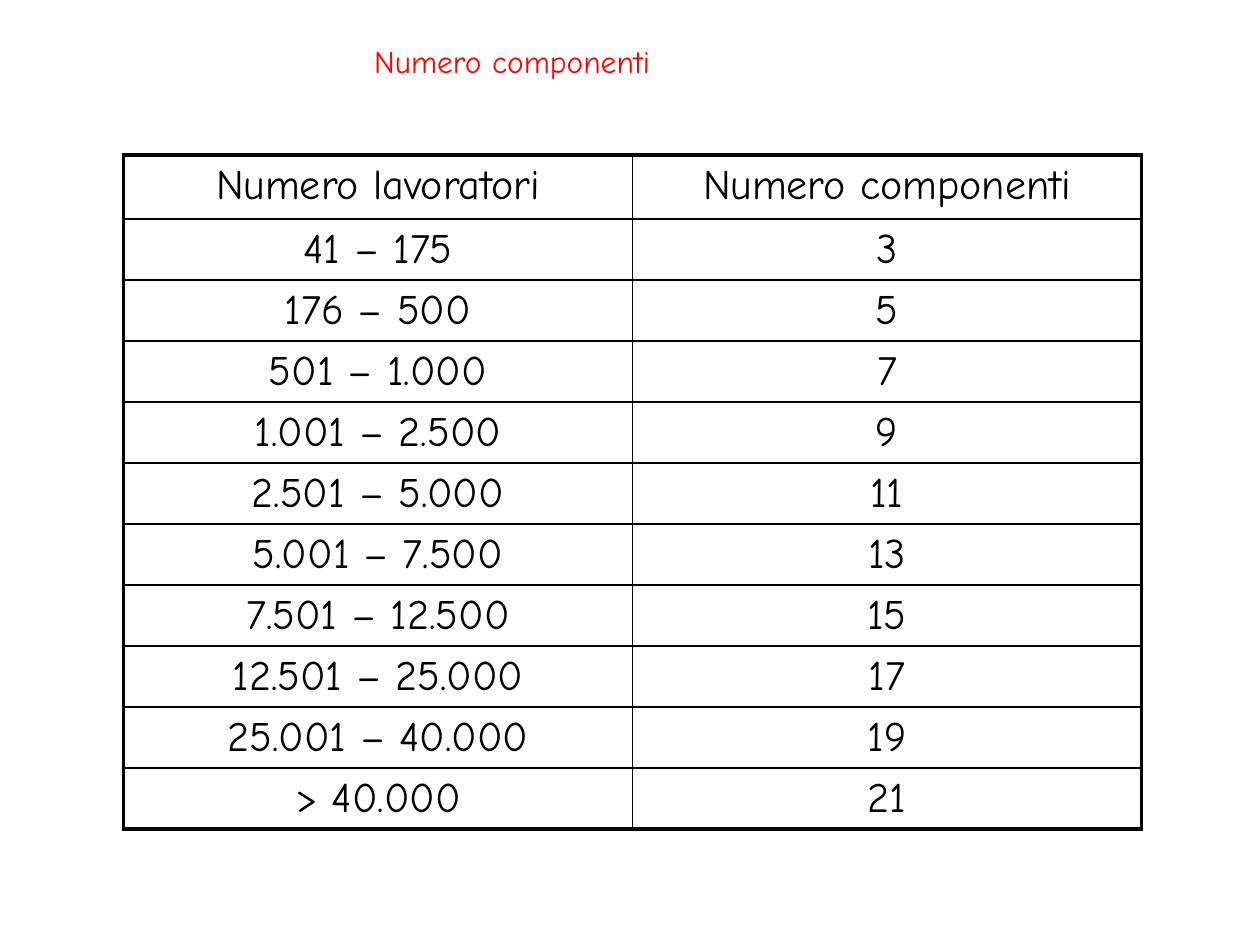
from pptx import Presentation
from pptx.dml.color import RGBColor as RGB
from pptx.enum.text import MSO_ANCHOR as Anchor, MSO_AUTO_SIZE as AutoSize, PP_ALIGN as Align
from pptx.oxml import parse_xml
from pptx.oxml.ns import nsdecls
from pptx.util import Inches, Pt

THEME = {
    "font": "Comic Neue",
    "title": {"size": Pt(18), "color": "FF0000"},
    "cell": {"size": Pt(24), "color": "000000"},
    "paper": "FFFFFF",
    "border": "000000",
    "outer": Pt(2.25),
    "inner": Pt(1),
}

MEMBERS_BY_WORKERS = [
    ("Numero lavoratori", "Numero componenti"),
    ("41 – 175", "3"),
    ("176 – 500", "5"),
    ("501 – 1.000", "7"),
    ("1.001 – 2.500", "9"),
    ("2.501 – 5.000", "11"),
    ("5.001 – 7.500", "13"),
    ("7.501 – 12.500", "15"),
    ("12.501 – 25.000", "17"),
    ("25.001 – 40.000", "19"),
    ("> 40.000", "21"),
]


def write(frame, text, style, align):
    frame.text = text
    paragraph = frame.paragraphs[0]
    paragraph.alignment = align
    font = paragraph.runs[0].font
    for name, value in {"name": THEME["font"], "size": style["size"], "bold": False}.items():
        setattr(font, name, value)
    font.color.rgb = RGB.from_string(style["color"])


def set_borders(cell, widths):
    properties = cell._tc.get_or_add_tcPr()
    for position, (side, width) in enumerate(widths.items()):
        properties.insert(position, parse_xml(
            f'<a:ln{side} {nsdecls("a")} w="{width}"><a:solidFill>'
            f'<a:srgbClr val="{THEME["border"]}"/></a:solidFill></a:ln{side}>'))


deck = Presentation()
deck.slide_width, deck.slide_height = Inches(10), Inches(7.5)
slide = deck.slides.add_slide(deck.slide_layouts[5])

# Title
title = slide.shapes.title
title_box = {"left": 2.87, "top": 0.28, "width": 4.28, "height": 0.63}
for name, value in title_box.items():
    setattr(title, name, Inches(value))
write(title.text_frame, "Numero componenti", THEME["title"], Align.LEFT)
title_format = {"vertical_anchor": Anchor.TOP, "word_wrap": True, "auto_size": AutoSize.NONE}
for name, value in title_format.items():
    setattr(title.text_frame, name, value)

# Table grid: a taller header above equal rows
last_row, last_col = len(MEMBERS_BY_WORKERS) - 1, len(MEMBERS_BY_WORKERS[0]) - 1
header_height, row_height = 0.51, 0.48
members = slide.shapes.add_table(
    last_row + 1, last_col + 1, Inches(0.98), Inches(1.23),
    Inches(8.08), Inches(header_height + last_row * row_height)).table
members.first_row = members.horz_banding = False
for row in members.rows:
    row.height = Inches(row_height)
members.rows[0].height = Inches(header_height)

# Cells: heavy outer frame, thin inner rules
for r, entries in enumerate(MEMBERS_BY_WORKERS):
    for c, entry in enumerate(entries):
        cell = members.cell(r, c)
        write(cell.text_frame, entry, THEME["cell"], Align.CENTER)
        cell.fill.solid()
        cell.fill.fore_color.rgb = RGB.from_string(THEME["paper"])
        on_frame = {"L": c == 0, "R": c == last_col, "T": r == 0, "B": r == last_row}
        set_borders(cell, {side: THEME["outer" if outer else "inner"]
                           for side, outer in on_frame.items()})

deck.save("out.pptx")
